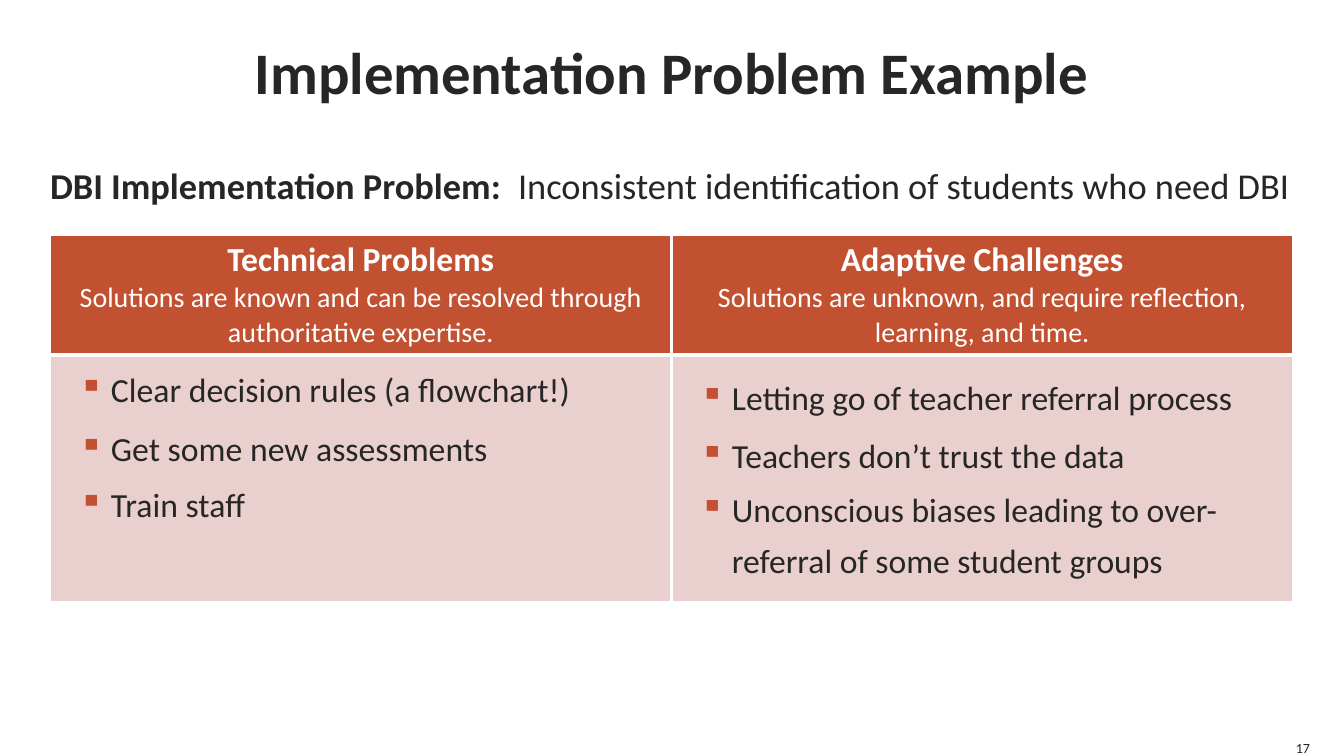
from dataclasses import dataclass
from lxml.etree import SubElement
from pptx import Presentation
from pptx.dml.color import RGBColor
from pptx.enum.text import MSO_ANCHOR as ANCHOR, PP_ALIGN as ALIGN
from pptx.oxml.ns import qn
from pptx.util import Emu, Pt


@dataclass(frozen=True)
class Theme:
    font: str = "Calibri"
    ink: str = "262626"
    paper: str = "FFFFFF"
    accent: str = "C25131"
    tint: str = "E9D0CE"
    title: float = 42
    problem: float = 26
    heading: float = 24
    summary: float = 20
    number: float = 10


THEME = Theme()
TITLE = "Implementation Problem Example"
PROBLEM = [
    ("DBI Implementation Problem:", True, 50, 480),
    ("Inconsistent identification of students who need DBI", False, 518, 775),
]
COLUMNS = [
    {
        "heading": "Technical Problems",
        "summary": "Solutions are known and can be resolved through authoritative expertise.",
        "left": 79, "width": 594, "height": 40, "spacing": 1.05, "size": 24.1,
        "items": [
            ("Clear decision rules (a flowchart!)", 367),
            ("Get some new assessments", 426),
            ("Train staff", 482),
        ],
    },
    {
        "heading": "Adaptive Challenges",
        "summary": "Solutions are unknown, and require reflection, learning, and time.",
        "left": 700, "width": 566, "height": 58, "spacing": 1.25, "size": 24,
        "items": [
            ("Letting go of teacher referral process", 367),
            ("Teachers don’t trust the data", 425),
            ("Unconscious biases leading to over-referral of some student groups", 479),
        ],
    },
]
PAGE = "17"
SLIDE = (1344, 756)
TABLE = (50, 235, 1243, 367)
ROW_HEIGHTS = (120, 247)
BULLET_INDENT = 32
EMU_PER_PX = 12192000 / SLIDE[0]


def px(length):
    return Emu(round(length * EMU_PER_PX))


def write(paragraph, text, size, color=THEME.ink, bold=False, **layout):
    for name, value in layout.items():
        setattr(paragraph, name, value)
    run = paragraph.add_run()
    run.text = text
    for name, value in {"name": THEME.font, "size": Pt(size), "bold": bold}.items():
        setattr(run.font, name, value)
    run.font.color.rgb = RGBColor.from_string(color)


def prepare(frame, **settings):
    values = {"margin_left": 0, "margin_top": 0, "margin_right": 0,
              "margin_bottom": 0, "word_wrap": True} | settings
    for name, value in values.items():
        setattr(frame, name, value)
    return frame.paragraphs[0]


def add_text(slide, box, **settings):
    return prepare(slide.shapes.add_textbox(*map(px, box)).text_frame, **settings)


def add_bullet(paragraph):
    props = paragraph._p.get_or_add_pPr()
    props.set("marL", str(px(BULLET_INDENT)))
    props.set("indent", str(-px(BULLET_INDENT)))
    SubElement(SubElement(props, qn("a:buClr")), qn("a:srgbClr"), val=THEME.accent)
    SubElement(props, qn("a:buChar"), char="▪")


def style_cell(cell, row, column, color):
    inner = {"lnL": column == 1, "lnR": column == 0, "lnT": row == 1, "lnB": row == 0}
    props = cell._tc.get_or_add_tcPr()
    for side, is_inner in inner.items():
        line = SubElement(props, qn(f"a:{side}"), w=str(Pt(3 if is_inner else 1)))
        SubElement(SubElement(line, qn("a:solidFill")), qn("a:srgbClr"), val=THEME.paper)
    cell.fill.solid()
    cell.fill.fore_color.rgb = RGBColor.from_string(color)


def add_comparison(slide):
    table = slide.shapes.add_table(2, len(COLUMNS), *map(px, TABLE)).table
    for row, height in zip(table.rows, ROW_HEIGHTS):
        row.height = px(height)
    for index, column in enumerate(COLUMNS):
        for row, color in enumerate((THEME.accent, THEME.tint)):
            style_cell(table.cell(row, index), row, index, color)
        frame = table.cell(0, index).text_frame
        write(frame.paragraphs[0], column["heading"], THEME.heading, THEME.paper, True,
              alignment=ALIGN.CENTER)
        write(frame.add_paragraph(), column["summary"], THEME.summary, THEME.paper,
              alignment=ALIGN.CENTER)


def add_items(slide, column):
    for text, top in column["items"]:
        item = add_text(slide, (column["left"], top, column["width"], column["height"]))
        add_bullet(item)
        write(item, text, column["size"], line_spacing=column["spacing"])


def main():
    deck = Presentation()
    deck.slide_width, deck.slide_height = map(px, SLIDE)
    slide = deck.slides.add_slide(deck.slide_layouts[5])
    title = slide.shapes.title
    title.left, title.top, title.width, title.height = map(px, (50, 0, 1243, 141))
    write(prepare(title.text_frame, vertical_anchor=ANCHOR.MIDDLE), TITLE, THEME.title,
          bold=True, alignment=ALIGN.CENTER)
    for text, bold, left, width in PROBLEM:
        write(add_text(slide, (left, 152, width, 59)), text, THEME.problem, bold=bold,
              line_spacing=1.25)
    add_comparison(slide)
    for column in COLUMNS:
        add_items(slide, column)
    page = add_text(slide, (1293, 739, 17, 17), word_wrap=False,
                    vertical_anchor=ANCHOR.BOTTOM)
    write(page, PAGE, THEME.number, alignment=ALIGN.RIGHT)
    deck.save("out.pptx")


if __name__ == "__main__":
    main()
